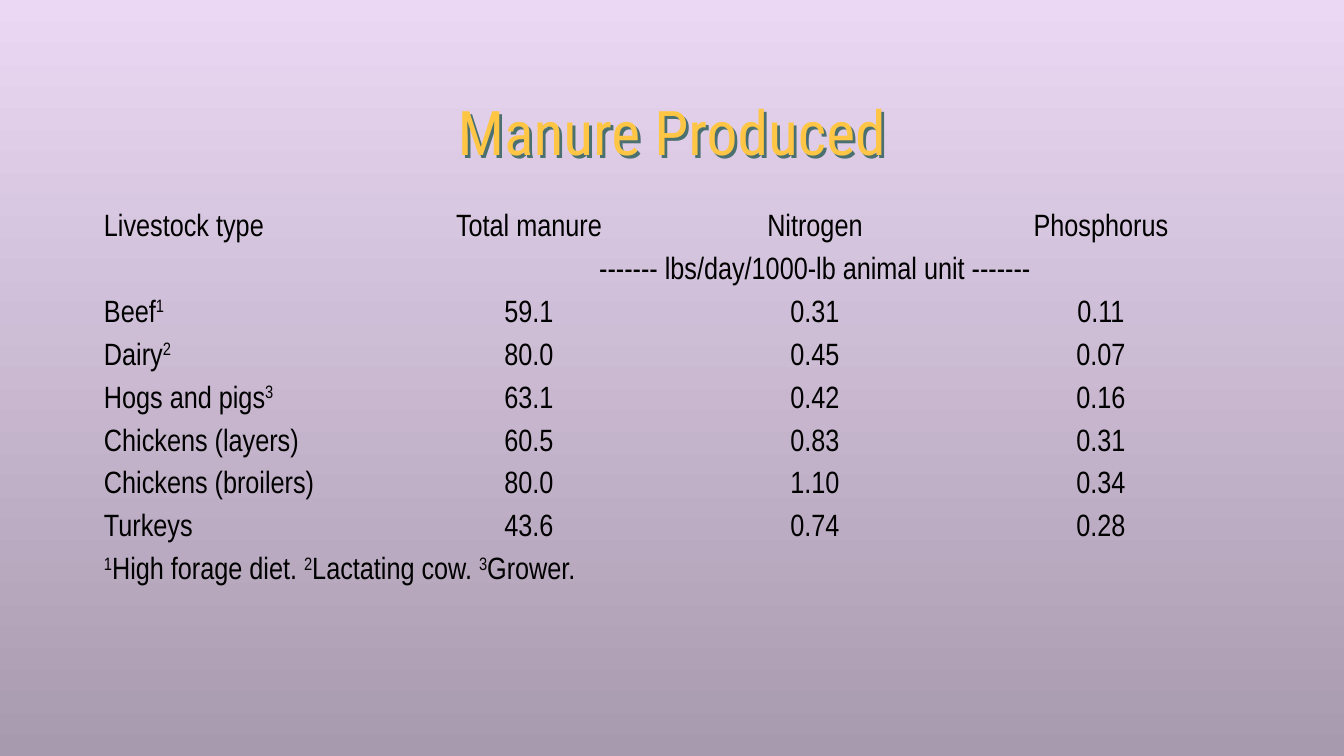
"""Build the slide listing manure produced by type of livestock."""
from dataclasses import dataclass

from lxml.etree import SubElement
from pptx import Presentation
from pptx.dml.color import RGBColor
from pptx.enum.text import MSO_ANCHOR, PP_ALIGN
from pptx.oxml.ns import qn
from pptx.util import Pt

TITLE = "Manure Produced"
HEADINGS = ("Livestock type", "Total manure", "Nitrogen", "Phosphorus")
UNITS = "------- lbs/day/1000-lb animal unit -------"
LIVESTOCK = [
    ("Beef", "1", "59.1", "0.31", "0.11"),
    ("Dairy", "2", "80.0", "0.45", "0.07"),
    ("Hogs and pigs", "3", "63.1", "0.42", "0.16"),
    ("Chickens (layers)", "", "60.5", "0.83", "0.31"),
    ("Chickens (broilers)", "", "80.0", "1.10", "0.34"),
    ("Turkeys", "", "43.6", "0.74", "0.28"),
]
FOOTNOTES = [("1", "High forage diet. "), ("2", "Lactating cow. "), ("3", "Grower.")]

SLIDE_SIZE = (1344, 756)
TITLE_BOX = (101, 68, 1142, 126)
TABLE_LEFT, TABLE_TOP = 98, 207
COLUMN_WIDTHS = (288, 286, 286, 286)
ROW_HEIGHT = 41
SIDE_MARGIN, EDGE_MARGIN = 6, 3
SHADOW_DISTANCE = 4
PLAIN_TABLE_STYLE = "{2D5ABB26-0587-4C30-8999-92F81FD0307C}"


@dataclass(frozen=True)
class Theme:
    """Colours, fonts and type sizes of the slide."""
    background: tuple = ("EBD8F4", "A89AAE")
    title_color: str = "FFC545"
    shadow_color: str = "4A7070"
    text_color: str = "000000"
    title_font: str = "Roboto Condensed"
    text_font: str = "Arial Narrow"
    title_size: int = 44
    text_size: int = 22


THEME = Theme()


def px(length):
    """Turn px into EMU."""
    return round(length * 914400 / 100.8)


def set_font(paragraph, name, size, color):
    """Give a paragraph its font."""
    paragraph.font.name = name
    paragraph.font.size = Pt(size)
    paragraph.font.color.rgb = RGBColor.from_string(color)


def paint_background(slide):
    """Fill the slide from top to bottom with a gradient."""
    fill = slide.background.fill
    fill.gradient()
    fill.gradient_angle = 270
    for position, (stop, color) in enumerate(zip(fill.gradient_stops, THEME.background)):
        stop.position = position
        stop.color.rgb = RGBColor.from_string(color)


def add_title(slide):
    """Add the centred title with its hard shadow."""
    title = slide.shapes.add_textbox(*map(px, TITLE_BOX))
    frame = title.text_frame
    frame.word_wrap = True
    frame.vertical_anchor = MSO_ANCHOR.MIDDLE
    paragraph = frame.paragraphs[0]
    paragraph.text = TITLE
    paragraph.alignment = PP_ALIGN.CENTER
    set_font(paragraph, THEME.title_font, THEME.title_size, THEME.title_color)
    effects = SubElement(title._element.spPr, qn("a:effectLst"))
    shadow = SubElement(effects, qn("a:outerShdw"), dist=str(px(SHADOW_DISTANCE)),
                        dir="2700000", algn="ctr", rotWithShape="0")
    SubElement(shadow, qn("a:srgbClr"), val=THEME.shadow_color)


def write_cell(cell, runs, alignment=PP_ALIGN.CENTER):
    """Write (text, is_superscript) runs into a cell."""
    paragraph = cell.text_frame.paragraphs[0]
    paragraph.alignment = alignment
    set_font(paragraph, THEME.text_font, THEME.text_size, THEME.text_color)
    for text, is_superscript in runs:
        run = paragraph.add_run()
        run.text = text
        if is_superscript:
            run.font._element.set("baseline", "30000")


def add_manure_table(slide):
    """Add the table of livestock types and amounts."""
    row_count = len(LIVESTOCK) + 3
    table = slide.shapes.add_table(
        row_count, len(HEADINGS), px(TABLE_LEFT), px(TABLE_TOP),
        px(sum(COLUMN_WIDTHS)), px(ROW_HEIGHT * row_count)).table
    table.first_row = table.horz_banding = False
    table._tbl.tblPr.find(qn("a:tableStyleId")).text = PLAIN_TABLE_STYLE
    for column, width in zip(table.columns, COLUMN_WIDTHS):
        column.width = px(width)
    for row in table.rows:
        row.height = px(ROW_HEIGHT)
    for cell in table.iter_cells():
        cell.fill.background()
        cell.vertical_anchor = MSO_ANCHOR.MIDDLE
        cell.margin_left = cell.margin_right = px(SIDE_MARGIN)
        cell.margin_top = cell.margin_bottom = px(EDGE_MARGIN)

    last = row_count - 1
    table.cell(1, 1).merge(table.cell(1, 3))
    table.cell(last, 0).merge(table.cell(last, 3))
    write_cell(table.cell(1, 1), [(UNITS, False)])
    notes = [run for mark, note in FOOTNOTES for run in ((mark, True), (note, False))]
    write_cell(table.cell(last, 0), notes, PP_ALIGN.LEFT)

    lines = [(0, (HEADINGS[0], "", *HEADINGS[1:])), *enumerate(LIVESTOCK, start=2)]
    for row, (name, mark, *values) in lines:
        label = [(name, False)] + ([(mark, True)] if mark else [])
        write_cell(table.cell(row, 0), label, PP_ALIGN.LEFT)
        for column, value in enumerate(values, start=1):
            write_cell(table.cell(row, column), [(value, False)])


def main():
    """Build and save the presentation."""
    presentation = Presentation()
    presentation.slide_width, presentation.slide_height = map(px, SLIDE_SIZE)
    slide = presentation.slides.add_slide(presentation.slide_layouts[6])
    paint_background(slide)
    add_title(slide)
    add_manure_table(slide)
    presentation.save("out.pptx")


if __name__ == "__main__":
    main()
